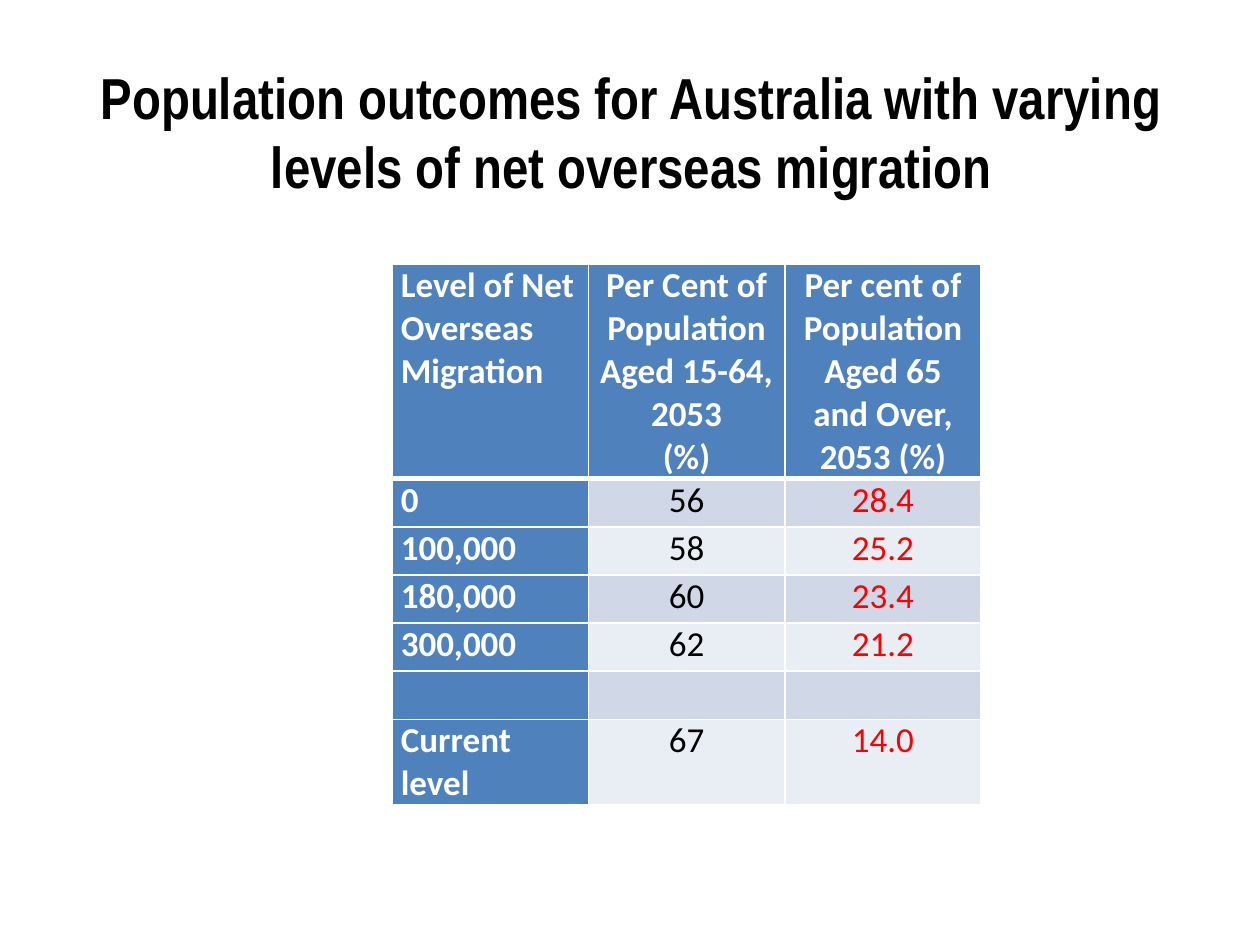
from lxml import etree
from pptx import Presentation
from pptx import util as u
from pptx.dml.color import RGBColor
from pptx.enum import text
from pptx.oxml.ns import qn

BLUE, WHITE, BLACK, RED = "4F81BD", "FFFFFF", "000000", "FF0000"
BANDS = ("D0D8E8", "E9EDF4")
TITLE = "Population outcomes for Australia with varying levels of net overseas migration"
ROWS = [
    ("Level of Net Overseas Migration",
     "Per Cent of Population Aged 15-64, 2053\n(%)",
     "Per cent of Population Aged 65 and Over, 2053 (%)"),
    ("0", "56", "28.4"),
    ("100,000", "58", "25.2"),
    ("180,000", "60", "23.4"),
    ("300,000", "62", "21.2"),
    ("", "", ""),
    ("Current level", "67", "14.0"),
]
HEADER_H, ROW_H, LAST_H = u.Cm(4.22), u.Cm(0.97), u.Cm(1.68)


def color(value):
    return RGBColor.from_string(value)


def format_text(tf, font, size, value, bold, align):
    for p in tf.paragraphs:
        p.alignment = align
        for f in [p.font] + [r.font for r in p.runs]:
            f.name, f.size, f.bold = font, u.Pt(size), bold
            f.color.rgb = color(value)


def set_borders(cell, value, bottom=1):
    tc_pr = cell._tc.get_or_add_tcPr()
    for side, width in (("L", 1), ("R", 1), ("T", 1), ("B", bottom)):
        ln = etree.SubElement(tc_pr, qn(f"a:ln{side}"), w=str(u.Pt(width)))
        fill = etree.SubElement(ln, qn("a:solidFill"))
        etree.SubElement(fill, qn("a:srgbClr"), val=value)


def add_title(slide, left, top, width, height):
    sp = slide.shapes.title
    sp.left, sp.top, sp.width, sp.height = left, top, width, height
    tf = sp.text_frame
    tf.text = TITLE
    tf.word_wrap = True
    tf.auto_size = text.MSO_AUTO_SIZE.NONE
    tf.vertical_anchor = text.MSO_ANCHOR.TOP
    format_text(tf, "Arial Narrow", 33, BLACK, True, text.PP_ALIGN.CENTER)


def format_cell(cell, value, row, col):
    heading = row == 0 or col == 0
    cell.margin_left = cell.margin_right = u.Cm(0.18)
    cell.margin_top = cell.margin_bottom = 0
    set_borders(cell, WHITE, bottom=3 if row == 0 else 1)
    cell.fill.solid()
    cell.fill.fore_color.rgb = color(BLUE if heading else BANDS[(row - 1) % 2])
    cell.text_frame.text = value
    format_text(cell.text_frame, "Calibri", 20,
                WHITE if heading else (BLACK, RED)[col - 1], heading,
                text.PP_ALIGN.CENTER if col else text.PP_ALIGN.LEFT)


def add_outcomes_table(slide, left, top, width):
    heights = [HEADER_H] + [ROW_H] * (len(ROWS) - 2) + [LAST_H]
    cols = len(ROWS[0])
    table = slide.shapes.add_table(len(ROWS), cols, left, top, width, sum(heights)).table
    for column in table.columns:
        column.width = width // cols
    for i, (values, height) in enumerate(zip(ROWS, heights)):
        table.rows[i].height = height
        for j, value in enumerate(values):
            format_cell(table.cell(i, j), value, i, j)


def main():
    prs = Presentation()
    prs.slide_width, prs.slide_height = u.Cm(25.4), u.Cm(19.05)
    slide = prs.slides.add_slide(prs.slide_layouts[5])
    add_title(slide, u.Cm(1.3), u.Cm(1.12), u.Cm(22.86), u.Cm(2.57))
    add_outcomes_table(slide, u.Cm(7.9), u.Cm(5.33), u.Cm(11.88))
    prs.save("out.pptx")


if __name__ == "__main__":
    main()
